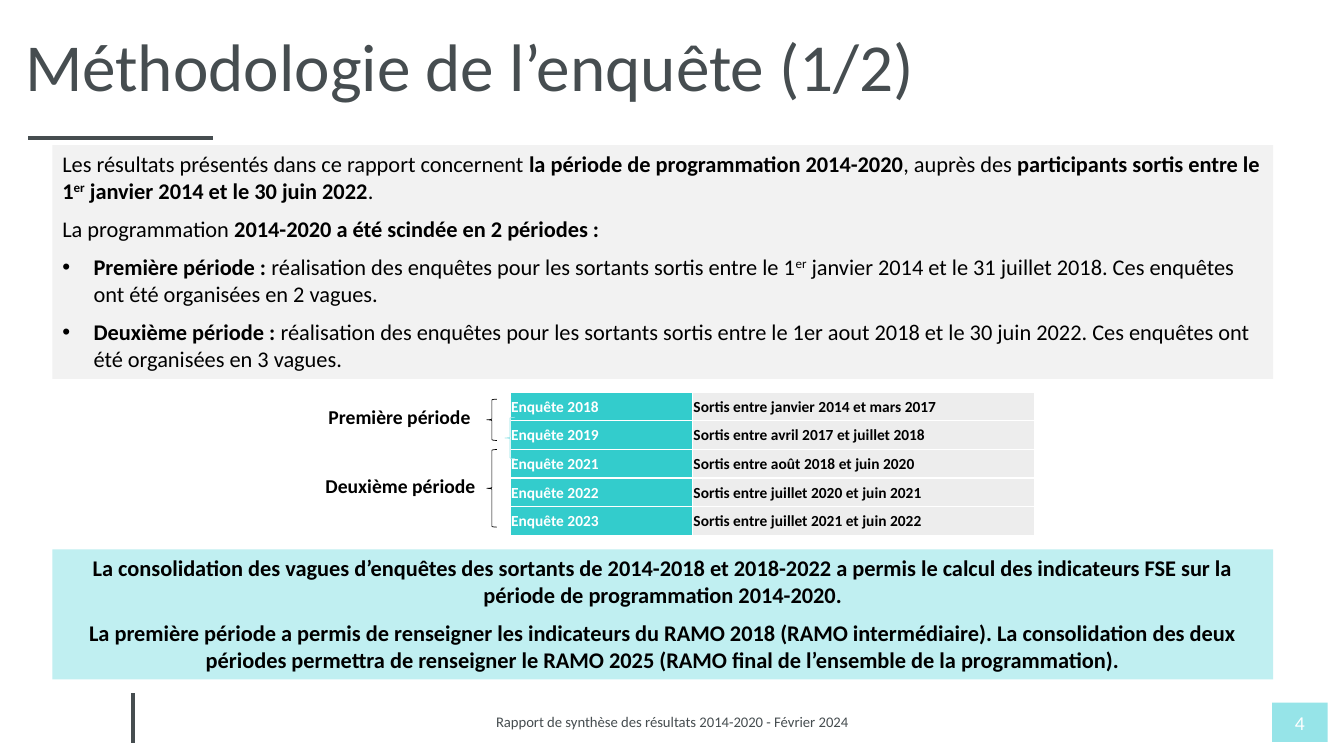
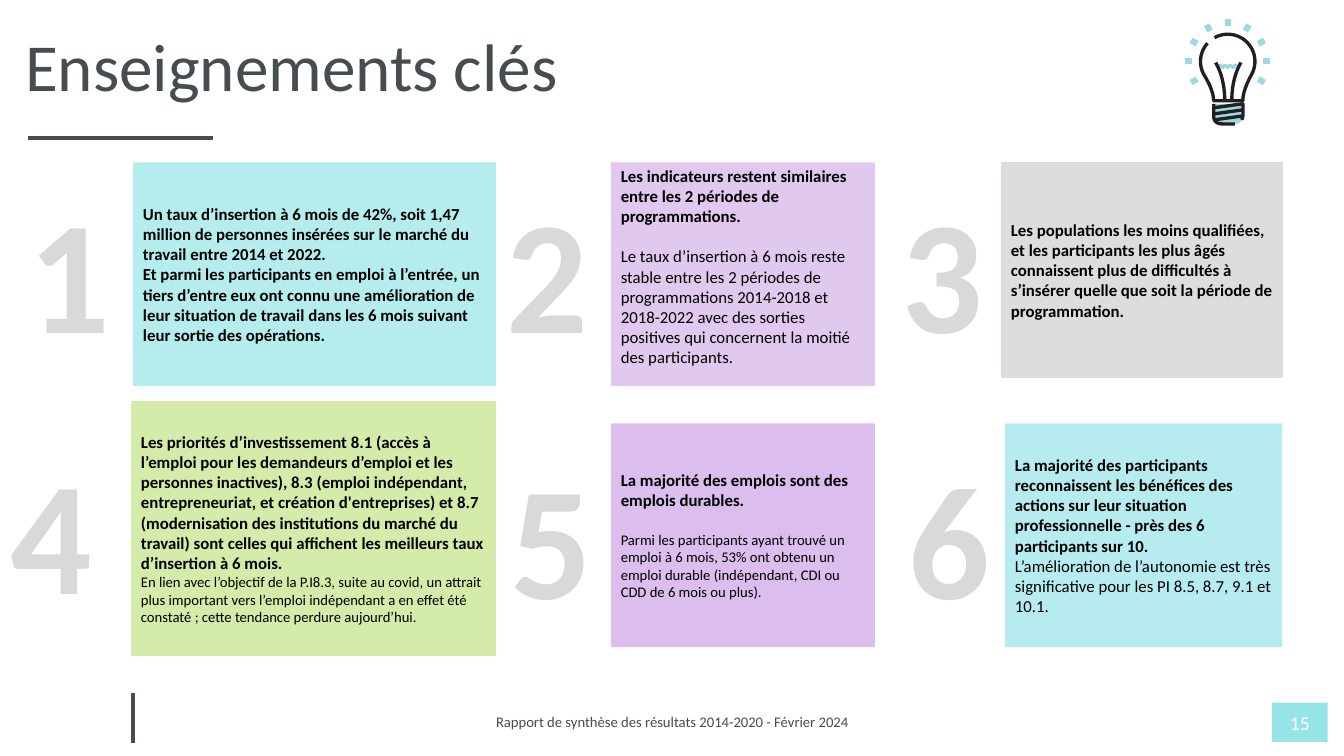
from dataclasses import dataclass
from math import cos, pi, radians, sin

from lxml.etree import SubElement
from pptx import Presentation
from pptx.dml.color import RGBColor
from pptx.enum.shapes import MSO_CONNECTOR, MSO_SHAPE
from pptx.enum.text import MSO_ANCHOR, PP_ALIGN
from pptx.oxml.ns import qn
from pptx.util import Inches, Pt


@dataclass(frozen=True)
class Theme:
    font: str = "Calibri"
    slate: str = "464D50"
    aqua: str = "96E4E8"
    pale_aqua: str = "B6ECEF"
    note_aqua: str = "C0EFF1"
    teal: str = "33CCCC"
    lilac: str = "D3B1E8"
    violet: str = "CDA2E7"
    green: str = "D5EBA9"
    gray: str = "D0CECE"
    light_gray: str = "F2F2F2"
    table_gray: str = "EDEDED"
    numeral_gray: str = "D9D9D9"
    bulb_blue: str = "9DD9E0"
    ink: str = "231F20"
    black: str = "000000"
    white: str = "FFFFFF"
    title: float = 48
    numeral: float = 115
    body: float = 16
    label: float = 14
    card: float = 12
    table: float = 11
    small: float = 10.5


@dataclass(frozen=True)
class Para:
    runs: tuple
    size: float = 12
    color: str = "000000"
    align: PP_ALIGN = PP_ALIGN.LEFT
    before: float = 0
    after: float = 0
    spacing: float = 1
    bullet: bool = False


@dataclass(frozen=True)
class Card:
    numeral: str
    numeral_at: tuple
    area: tuple
    fill: str
    paras: tuple
    alpha: int = 100
    top_inset: float = 0


THEME = Theme()
COLUMNS, ROWS = 133.33, 75
CELL = Inches(0.1)
BLANK_LINE = 14.6
FOOTER = "Rapport de synthèse des résultats 2014-2020 - Février 2024"


def cells(*counts):
    return [round(count * CELL) for count in counts]


def rgb(color):
    return RGBColor.from_string(color)


def bold(text):
    return text, True, False


def plain(text):
    return text, False, False


def raised(text, strong=False):
    return text, strong, True


def write(frame, paras, anchor=MSO_ANCHOR.TOP, wrap=True):
    frame.word_wrap = wrap
    frame.vertical_anchor = anchor
    for index, item in enumerate(paras):
        para = frame.add_paragraph() if index else frame.paragraphs[0]
        para.alignment = item.align
        para.space_before, para.space_after = Pt(item.before), Pt(item.after)
        para.line_spacing = item.spacing
        if item.bullet:
            properties = para._p.get_or_add_pPr()
            properties.set("marL", str(Inches(0.31)))
            properties.set("indent", str(-Inches(0.31)))
            SubElement(properties, qn("a:buFont")).set("typeface", "Arial")
            SubElement(properties, qn("a:buChar")).set("char", "•")
        for text, strong, superscript in item.runs:
            span = para.add_run()
            span.text = text
            span.font.name = THEME.font
            span.font.size = Pt(item.size)
            span.font.bold = strong
            span.font.color.rgb = rgb(item.color)
            if superscript:
                span._r.get_or_add_rPr().set("baseline", "30000")


def add_text(page, area, *paras, anchor=MSO_ANCHOR.TOP):
    box = page.shapes.add_textbox(*cells(*area))
    write(box.text_frame, paras, anchor)


def paint(shape, fill=None, line=None, width=1, alpha=100):
    shape.shadow.inherit = False
    if fill:
        shape.fill.solid()
        shape.fill.fore_color.rgb = rgb(fill)
        if alpha < 100:
            color = shape.element.spPr.find(qn("a:solidFill"))[0]
            SubElement(color, qn("a:alpha")).set("val", str(alpha * 1000))
    else:
        shape.fill.background()
    if line:
        shape.line.color.rgb = rgb(line)
        shape.line.width = Pt(width)
    else:
        shape.line.fill.background()


def add_box(page, area, fill, *paras, anchor=MSO_ANCHOR.TOP, alpha=100, wrap=True):
    box = page.shapes.add_shape(MSO_SHAPE.RECTANGLE, *cells(*area))
    paint(box, fill, alpha=alpha)
    write(box.text_frame, paras, anchor, wrap)
    return box


def add_brace(page, area, color):
    brace = page.shapes.add_shape(MSO_SHAPE.LEFT_BRACE, *cells(*area))
    paint(brace, line=color, width=0.5)


def add_line(page, start, end, color, width):
    line = page.shapes.add_connector(MSO_CONNECTOR.STRAIGHT, *cells(*start, *end))
    line.line.color.rgb = rgb(color)
    line.line.width = Pt(width)
    SubElement(line.element.spPr, qn("a:effectLst"))


def add_outline(page, points, fill=None, line=None, closed=False):
    corners = [cells(*point) for point in points]
    builder = page.shapes.build_freeform(*corners[0])
    builder.add_line_segments(corners[1:], close=closed)
    paint(builder.convert_to_shape(), fill, line, 2.38)


def polar(center, radius, degrees):
    angle = radians(degrees)
    return center[0] + radius * cos(angle), center[1] + radius * sin(angle)


def arc(center, radius, start, end, steps=24):
    return [polar(center, radius, start + (end - start) * step / steps) for step in range(steps + 1)]


def curve(start, control, end, steps=10):
    shares = [step / steps for step in range(steps + 1)]
    return [tuple((1 - t) ** 2 * a + 2 * t * (1 - t) * b + t * t * c
                  for a, b, c in zip(start, control, end)) for t in shares]


def add_bulb(page):
    center, radius = (121.8, 6.1), 2.7
    left, right, neck, top, bottom = 120.4, 123.3, 10, 10.3, 12.3
    left_corner = curve((left, 11.5), (left, bottom), (121.3, bottom))
    right_corner = curve((122.4, bottom), (right, bottom), (right, 11.5))
    add_outline(page, [(left, top), *left_corner, *right_corner, (right, top)],
                fill=THEME.bulb_blue, closed=True)
    wave = [(120.8 + step / 20, 6.7 - 0.2 * abs(sin(step * pi / 10))) for step in range(41)]
    add_outline(page, wave, line=THEME.bulb_blue)
    for degrees in range(150, 391, 30):
        add_line(page, polar(center, 3.5, degrees), polar(center, 4.2, degrees), THEME.bulb_blue, 4.3)
    left_side = curve(polar(center, radius, 150), (120.4, 9), (left, neck))
    right_side = curve((right, neck), (123.3, 9), polar(center, radius, 30))
    glass = arc(center, radius, 222, 150) + left_side + right_side + arc(center, radius, 30, -119)
    add_outline(page, glass, line=THEME.ink)
    for foot, tip in ((121.5, 120.6), (122.2, 123.1)):
        add_outline(page, curve((foot, neck), (foot, 7.8), (tip, 6.2)), line=THEME.ink)
    add_outline(page, [(left, top), *left_corner, (122.5, bottom)], line=THEME.ink)
    add_outline(page, [(left, 10.7), (right, top), (right, 11.5), (123.2, 11.9)], line=THEME.ink)
    for height in (10.9, 11.5):
        add_line(page, (right, height), (left, height + 0.4), THEME.ink, 2.38)


def add_page(deck, title, number):
    page = deck.slides.add_slide(deck.slide_layouts[6])
    add_line(page, (2.8, 13.7), (21.1, 13.7), THEME.slate, 3)
    add_line(page, (13.2, 73.7), (13.2, 68.8), THEME.slate, 2.25)
    add_box(page, (126.2, 69.7, 5.5, 3.9), THEME.aqua,
            Para((plain(number),), THEME.label, THEME.white, PP_ALIGN.CENTER),
            anchor=MSO_ANCHOR.MIDDLE, wrap=False)
    add_text(page, (30, 69.7, 73.4, 3.9),
             Para((plain(FOOTER),), THEME.small, THEME.slate, PP_ALIGN.CENTER, spacing=0.9),
             anchor=MSO_ANCHOR.MIDDLE)
    add_text(page, (1.5, 1.9, 124.8, 9.1), Para((plain(title),), THEME.title, THEME.slate))
    return page


def add_survey_table(page, rows):
    table = page.shapes.add_table(len(rows), 2, *cells(50.6, 38.9, 52, 14.2)).table
    table.first_row = table.horz_banding = False
    for column, width in zip(table.columns, cells(18.1, 33.9)):
        column.width = width
    styles = ((THEME.teal, THEME.white), (THEME.table_gray, THEME.black))
    for row, texts in enumerate(rows):
        for column, (text, (fill, color)) in enumerate(zip(texts, styles)):
            cell = table.cell(row, column)
            cell.fill.solid()
            cell.fill.fore_color.rgb = rgb(fill)
            cell.margin_left = cell.margin_right = cell.margin_top = Inches(0.01)
            cell.margin_bottom = 0
            write(cell.text_frame, [Para((bold(text),), THEME.table, color)])
            cell.vertical_anchor = MSO_ANCHOR.MIDDLE


def add_card(page, card):
    add_text(page, (*card.numeral_at, 13.3, 20.4),
             Para((bold(card.numeral),), THEME.numeral, THEME.numeral_gray), anchor=MSO_ANCHOR.MIDDLE)
    anchor = MSO_ANCHOR.TOP if card.top_inset else MSO_ANCHOR.MIDDLE
    box = add_box(page, card.area, card.fill, *card.paras, anchor=anchor, alpha=card.alpha)
    if card.top_inset:
        box.text_frame.margin_top = Inches(card.top_inset)


def build_methodology(deck):
    page = add_page(deck, "Méthodologie de l’enquête (1/2)", "4")
    body = {"size": THEME.body, "after": 8}
    add_box(
        page, (5.2, 14.4, 121.1, 23.2), THEME.light_gray,
        Para((plain("Les résultats présentés dans ce rapport concernent "),
              bold("la période de programmation 2014-2020"), plain(", auprès des "),
              bold("participants sortis entre le 1"), raised("er", True),
              bold(" janvier 2014 et le 30 juin 2022"), plain(".")), **body),
        Para((plain("La programmation"), bold(" 2014-2020 a été scindée en 2 périodes :")), **body),
        Para((bold("Première période : "),
              plain("réalisation des enquêtes pour les sortants sortis entre le 1"), raised("er"),
              plain(" janvier 2014 et le 31 juillet 2018. Ces enquêtes ont été organisées en 2 vagues.")),
             bullet=True, **body),
        Para((bold("Deuxième période : "),
              plain("réalisation des enquêtes pour les sortants sortis entre le 1er aout 2018 et le "
                    "30 juin 2022. Ces enquêtes ont été organisées en 3 vagues.")), bullet=True, **body))
    conclusions = (
        "La consolidation des vagues d’enquêtes des sortants de 2014-2018 et 2018-2022 a permis le calcul "
        "des indicateurs FSE sur la période de programmation 2014-2020.",
        "La première période a permis de renseigner les indicateurs du RAMO 2018 (RAMO intermédiaire). "
        "La consolidation des deux périodes permettra de renseigner le RAMO 2025 (RAMO final de "
        "l’ensemble de la programmation).")
    add_box(page, (5.2, 54.5, 121.1, 12.9), THEME.note_aqua,
            *(Para((bold(text),), align=PP_ALIGN.CENTER, **body) for text in conclusions))
    add_survey_table(page, (
        ("Enquête 2018", "Sortis entre janvier 2014 et mars 2017"),
        ("Enquête 2019", "Sortis entre avril 2017 et juillet 2018"),
        ("Enquête 2021", "Sortis entre août 2018 et juin 2020"),
        ("Enquête 2022", "Sortis entre juillet 2020 et juin 2021"),
        ("Enquête 2023", "Sortis entre juillet 2021 et juin 2022")))
    add_brace(page, (48.3, 39.6, 1, 4.1), THEME.black)
    add_brace(page, (50.1, 41.4, 1, 4.1), THEME.aqua)
    add_brace(page, (48.3, 44.6, 1, 7.7), THEME.black)
    for text, area in (("Première période", (31.6, 39.7, 17.2, 3.4)),
                       ("Deuxième période", (31.3, 46.5, 18.5, 3.4))):
        add_text(page, area, Para((bold(text),), THEME.label))


def build_lessons(deck):
    page = add_page(deck, "Enseignements clés", "15")
    cards = (
        Card("1", (1.8, 16.5), (13.2, 16.1, 36, 22.2), THEME.aqua, (
            Para((bold("Un taux d’insertion à 6 mois de 42%, soit 1,47 million de personnes insérées sur "
                       "le marché du travail entre 2014 et 2022."),)),
            Para((bold("Et parmi les participants en emploi à l’entrée, un tiers d’entre eux ont connu une "
                       "amélioration de leur situation de travail dans les 6 mois suivant leur sortie des "
                       "opérations."),))), 70),
        Card("2", (49.3, 16.5), (60.6, 16.1, 26.2, 22.2), THEME.lilac, (
            Para((bold("Les indicateurs restent similaires entre les 2 périodes de programmations."),)),
            Para((plain("Le taux d’insertion à 6 mois reste stable entre les 2 périodes de programmations "
                        "2014-2018 et 2018-2022 avec des sorties positives qui concernent la moitié des "
                        "participants."),), before=BLANK_LINE)), 70, 0.03),
        Card("3", (88.5, 16.5), (99.3, 16.1, 28, 21.4), THEME.gray, (
            Para((bold("Les populations les moins qualifiées, et les participants les plus âgés "
                       "connaissent plus de difficultés à s’insérer quelle que soit la période de "
                       "programmation."),)),), 70),
        Card("4", (0.1, 42.4), (13, 39.8, 36.2, 25.3), THEME.green, (
            Para((bold("Les priorités d’investissement 8.1 (accès à l’emploi pour les demandeurs d’emploi "
                       "et les personnes inactives), 8.3 (emploi indépendant, entrepreneuriat, et création "
                       "d'entreprises) et 8.7 (modernisation des institutions du marché du travail) sont "
                       "celles qui affichent les meilleurs taux d’insertion à 6 mois."),)),
            Para((plain("En lien avec l’objectif de la P.I8.3, suite au covid, un attrait plus important "
                        "vers l’emploi indépendant a en effet été constaté ; cette tendance perdure "
                        "aujourd’hui."),), THEME.small))),
        Card("5", (49.7, 42.9), (60.6, 42, 26.2, 22.2), THEME.violet, (
            Para((bold("La majorité des emplois sont des emplois durables."),)),
            Para((plain("Parmi les participants ayant trouvé un emploi à 6 mois, 53% ont obtenu un emploi "
                        "durable (indépendant, CDI ou CDD de 6 mois ou plus)."),),
                 THEME.small, before=BLANK_LINE)), 70),
        Card("6", (89.1, 42.9), (99.7, 42, 27.5, 22.2), THEME.pale_aqua, (
            Para((bold("La majorité des participants reconnaissent les bénéfices des actions sur leur "
                       "situation professionnelle - près des 6 participants sur 10."),)),
            Para((plain("L’amélioration de l’autonomie est très significative pour les PI 8.5, 8.7, 9.1 "
                        "et 10.1."),)))))
    for card in cards:
        add_card(page, card)
    add_bulb(page)


def main():
    deck = Presentation()
    deck.slide_width, deck.slide_height = cells(COLUMNS, ROWS)
    build_methodology(deck)
    build_lessons(deck)
    deck.save("out.pptx")


if __name__ == "__main__":
    main()
